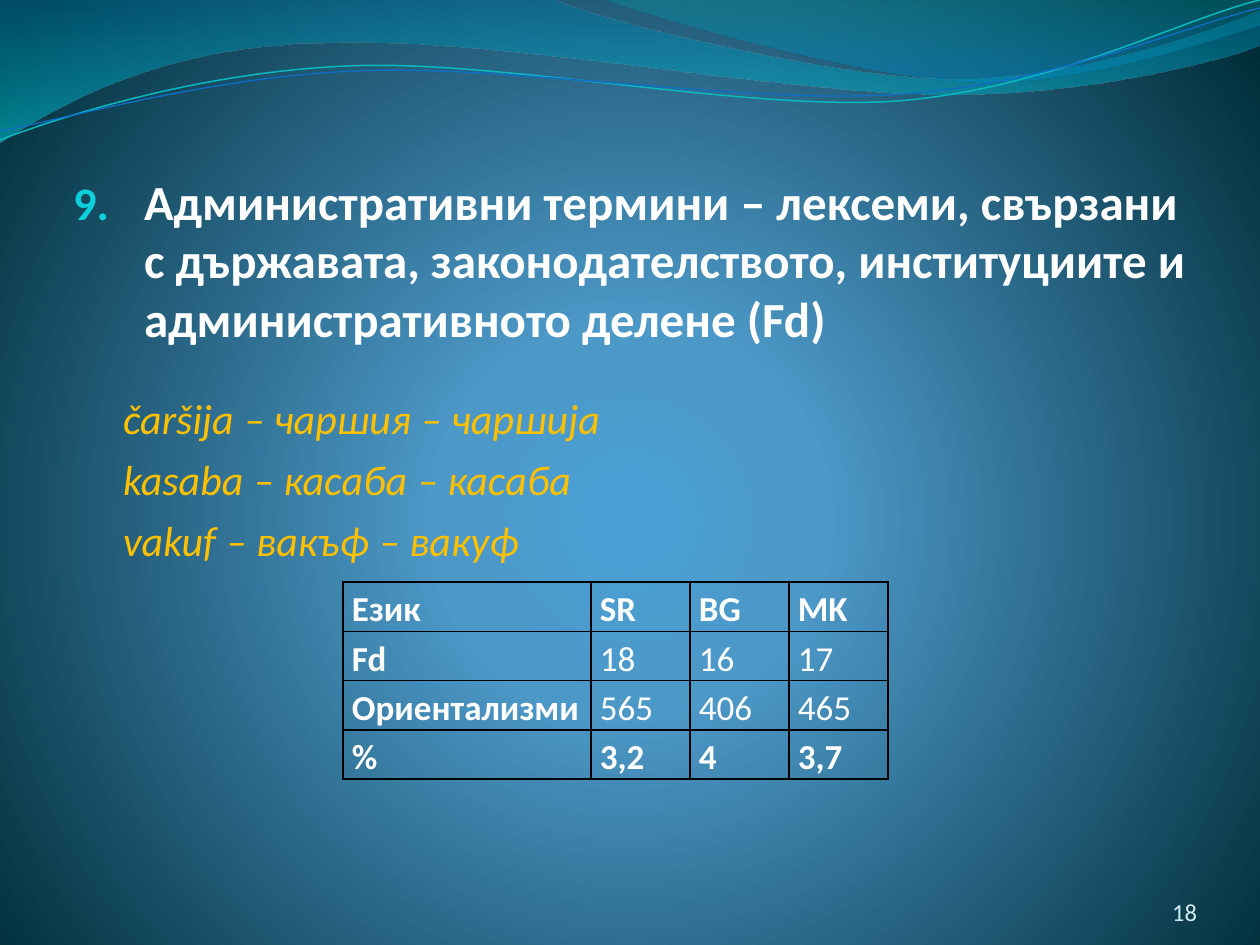
from lxml import etree
from pptx import Presentation
from pptx.dml.color import RGBColor
from pptx.enum.text import MSO_ANCHOR, PP_ALIGN
from pptx.oxml import parse_xml
from pptx.oxml.ns import nsdecls, qn
from pptx.util import Pt

PX = 914400 / 126
FONT = "Calibri"
WHITE = RGBColor(0xFF, 0xFF, 0xFF)
BLACK = RGBColor(0x00, 0x00, 0x00)
AMBER = RGBColor(0xFF, 0xC0, 0x00)
CYAN = RGBColor(0x0B, 0xD0, 0xD9)
PALE = RGBColor(0xD1, 0xEA, 0xEE)
TEAL_LINE = RGBColor(0x0A, 0xB8, 0xBF)
BLUE_LINE = RGBColor(0x0F, 0x6F, 0xC6)
SKY = RGBColor(0x4A, 0xA0, 0xD6)
STEEL = RGBColor(0x4C, 0x98, 0xC7)
NIGHT = RGBColor(0x00, 0x2C, 0x38)
OCEAN = RGBColor(0x00, 0x74, 0xA1)
TURQUOISE = RGBColor(0x00, 0xC6, 0xCF)
TEAL = RGBColor(0x00, 0xA1, 0xA9)
AZURE = RGBColor(0x00, 0x8B, 0xBF)

DOWNWARD = '<a:lin ang="5400000" scaled="1"/>'
RADIAL = ('<a:path path="circle"><a:fillToRect l="10000" t="110000" '
          'r="10000" b="100000"/></a:path>')

# Each wave: start point, then cubic segments (6 numbers) or straight ones (2)
BANDS = [
    ((0, 0), [(554, 0), (600, 21, 837, 79, 955, 79),
              (1075, 79, 1207, 33, 1260, 11), (1260, 45),
              (1239, 55, 1096, 96, 940, 94), (784, 94, 481, 35, 324, 43),
              (163, 45, 58, 105, 0, 142)],
     [(0, OCEAN, 45), (100, TURQUOISE, 55)]),
    ((604, 0), [(641, 14, 859, 78, 969, 82),
                (1079, 87, 1211, 40, 1260, 26), (1260, 0)],
     [(0, TEAL, 30), (80, AZURE, 45)]),
]
STRANDS = [
    ((0, 140), [(60, 117, 199, 72, 349, 66), (498, 59, 747, 112, 898, 101),
                (1050, 89, 1182, 19, 1260, 0)], TEAL_LINE, 0.85),
    ((0, 131), [(59, 121, 207, 77, 357, 71), (508, 64, 752, 106, 903, 94),
                (1053, 84, 1186, 26, 1260, 8)], BLUE_LINE, 0.75),
]

HEADING = ("Административни термини ‒ лексеми, свързани с държавата, "
           "законодателството, институциите и административното делене (Fd)")
EXAMPLES = ["čaršija ‒ чаршия ‒ чаршија",
            "kasaba ‒ касаба ‒ касаба",
            "vakuf ‒ вакъф ‒ вакуф"]
ROWS = [("Език", "SR", "BG", "MK"),
        ("Fd", "18", "16", "17"),
        ("Ориентализми", "565", "406", "465"),
        ("%", "3,2", "4", "3,7")]
BOLD_ROWS = (0, 3)


def px(n):
    return round(n * PX)


def gradient(stops, direction):
    """Return a gradFill element for (position, colour, opacity) stops."""
    gs = ""
    for pos, color, opacity in stops:
        alpha = f'<a:alpha val="{opacity * 1000}"/>' if opacity < 100 else ""
        gs += (f'<a:gs pos="{pos * 1000}"><a:srgbClr val="{color}">'
               f'{alpha}</a:srgbClr></a:gs>')
    return parse_xml(f'<a:gradFill {nsdecls("a")} rotWithShape="1">'
                     f'<a:gsLst>{gs}</a:gsLst>{direction}</a:gradFill>')


def swap_solid_fill(parent, new_fill):
    parent.replace(parent.find(qn("a:solidFill")), new_fill)


def add_run(p, text, size, color, bold=False, italic=False):
    r = p.add_run()
    r.text = text
    f = r.font
    f.name, f.size, f.bold, f.italic = FONT, Pt(size), bold, italic
    f.color.rgb = color


def set_margins(box, left, top, right, bottom):
    box.margin_left, box.margin_top = px(left), px(top)
    box.margin_right, box.margin_bottom = px(right), px(bottom)


def add_wave(slide, start, segments, close):
    """Build the outline from segment ends, then bend the cubic segments."""
    ends = [seg[-2:] for seg in segments]
    fb = slide.shapes.build_freeform(*start, scale=PX)
    fb.add_line_segments(ends, close=close)
    sp = fb.convert_to_shape()
    sp.shadow.inherit = False
    left, top = map(min, zip(start, *ends))
    lines = list(sp._element.iter(qn("a:lnTo")))
    for line, seg in zip(lines, segments):
        if len(seg) == 6:
            curve = etree.Element(qn("a:cubicBezTo"))
            for x, y in zip(seg[::2], seg[1::2]):
                etree.SubElement(curve, qn("a:pt"),
                                 x=str(x - left), y=str(y - top))
            line.getparent().replace(line, curve)
    return sp


def add_backdrop(slide):
    slide.background.fill.solid()
    bg_pr = slide.background._cSld.find(qn("p:bg")).find(qn("p:bgPr"))
    swap_solid_fill(bg_pr, gradient(
        [(0, SKY, 100), (25, STEEL, 100), (100, NIGHT, 100)], RADIAL))
    for start, segments, stops in BANDS:
        sp = add_wave(slide, start, segments, True)
        sp.line.fill.background()
        sp.fill.solid()
        swap_solid_fill(sp._element.spPr, gradient(stops, DOWNWARD))
    for start, segments, color, width in STRANDS:
        sp = add_wave(slide, start, segments, False)
        sp.fill.background()
        sp.line.color.rgb = color
        sp.line.width = Pt(width)


def number_paragraph(p, number, indent):
    pPr = p._p.get_or_add_pPr()
    pPr.set("marL", str(px(indent)))
    pPr.set("indent", str(-px(indent)))
    color = etree.SubElement(pPr, qn("a:buClr"))
    etree.SubElement(color, qn("a:srgbClr"), val=str(CYAN))
    etree.SubElement(pPr, qn("a:buSzPct"), val="95000")
    etree.SubElement(pPr, qn("a:buFont"), typeface=FONT)
    etree.SubElement(pPr, qn("a:buAutoNum"), type="arabicPeriod",
                     startAt=str(number))


def fill_body(sp, left, top, width, height):
    sp.left, sp.top, sp.width, sp.height = map(px, (left, top, width, height))
    tf = sp.text_frame
    tf.word_wrap = True
    tf.vertical_anchor = MSO_ANCHOR.TOP
    set_margins(tf, 0, 6, 3, 6)
    p = tf.paragraphs[0]
    p.alignment = PP_ALIGN.LEFT
    p.space_before = Pt(0)
    number_paragraph(p, 9, 71)
    add_run(p, HEADING, 28, WHITE, bold=True)
    for i, text in enumerate(EXAMPLES):
        p = tf.add_paragraph()
        p.alignment = PP_ALIGN.LEFT
        p.space_before = Pt(6 if i else 26)
        p._p.get_or_add_pPr().set("marL", str(px(50)))
        add_run(p, text, 24, AMBER, italic=True)


def add_borders(cell, color, width):
    tcPr = cell._tc.get_or_add_tcPr()
    for i, side in enumerate(("lnL", "lnR", "lnT", "lnB")):
        tcPr.insert(i, parse_xml(
            f'<a:{side} {nsdecls("a")} w="{Pt(width)}"><a:solidFill>'
            f'<a:srgbClr val="{color}"/></a:solidFill></a:{side}>'))


def add_counts_table(slide, left, top, col_widths, row_height):
    box = (left, top, sum(col_widths), row_height * len(ROWS))
    table = slide.shapes.add_table(len(ROWS), len(col_widths),
                                   *map(px, box)).table
    table.first_row = table.horz_banding = False
    for col, width in zip(table.columns, col_widths):
        col.width = px(width)
    for i, values in enumerate(ROWS):
        table.rows[i].height = px(row_height)
        for j, value in enumerate(values):
            cell = table.cell(i, j)
            cell.fill.background()
            add_borders(cell, BLACK, 1)
            set_margins(cell, 9, 0, 9, 0)
            p = cell.text_frame.paragraphs[0]
            p.line_spacing = 1.15
            add_run(p, value, 20, WHITE, bold=j == 0 or i in BOLD_ROWS)


def add_page_number(slide, number, *box):
    tf = slide.shapes.add_textbox(*map(px, box)).text_frame
    tf.word_wrap = True
    tf.vertical_anchor = MSO_ANCHOR.BOTTOM
    set_margins(tf, 0, 0, 0, 0)
    p = tf.paragraphs[0]
    p.alignment = PP_ALIGN.RIGHT
    add_run(p, str(number), 14, PALE)


def main():
    prs = Presentation()
    prs.slide_width, prs.slide_height = px(1260), px(945)
    slide = prs.slides.add_slide(prs.slide_layouts[0])
    title, body = slide.placeholders
    title._element.getparent().remove(title._element)
    add_backdrop(slide)
    fill_body(body, 73, 165, 1123, 725)
    add_counts_table(slide, 343, 582, (248, 99, 99, 99), 49)
    add_page_number(slide, 18, 1092, 876, 105, 50)
    prs.save("out.pptx")


if __name__ == "__main__":
    main()
